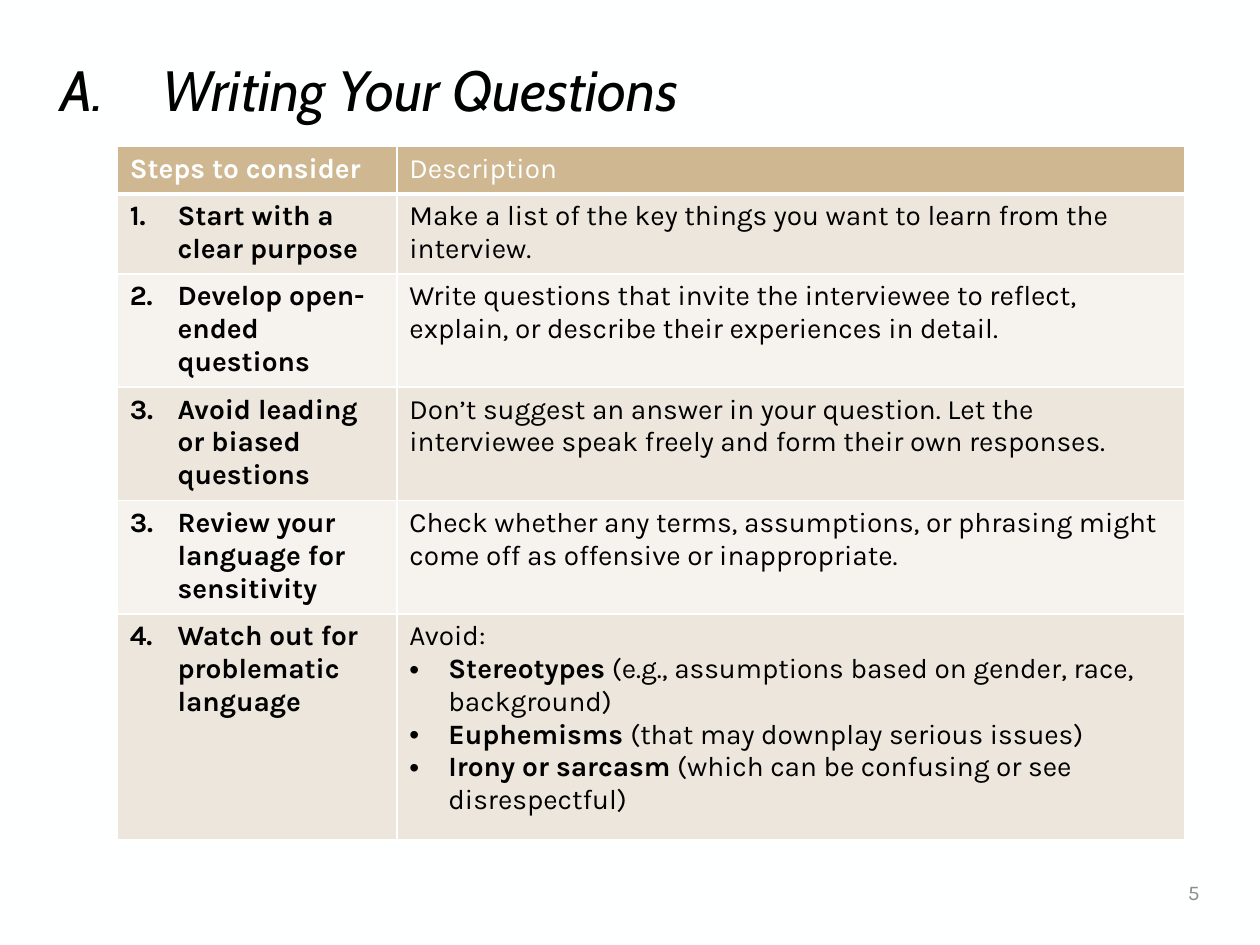
from lxml import etree
from pptx import Presentation
from pptx.dml.color import RGBColor
from pptx.enum.text import MSO_ANCHOR, PP_ALIGN
from pptx.oxml.ns import qn
from pptx.util import Inches, Pt

MIDDLE = MSO_ANCHOR.MIDDLE
LEFT, RIGHT = PP_ALIGN.LEFT, PP_ALIGN.RIGHT
WHITE = RGBColor(0xFE, 0xFF, 0xFF)
BLACK = RGBColor(0, 0, 0)
GRAY = RGBColor(0x8C, 0x8C, 0x8C)
TAN = RGBColor(0xCF, 0xB8, 0x91)
BANDS = [RGBColor(0xED, 0xE6, 0xDC), RGBColor(0xF6, 0xF3, 0xEE)]

HEADINGS = ["Steps to consider", "Description"]
STEPS = [
    (1, "Start with a clear purpose",
     "Make a list of the key things you want to learn from the interview."),
    (2, "Develop open-ended questions",
     "Write questions that invite the interviewee to reflect, explain, "
     "or describe their experiences in detail."),
    (3, "Avoid leading or biased questions",
     "Don’t suggest an answer in your question. Let the interviewee speak "
     "freely and form their own responses."),
    (3, "Review your language for sensitivity",
     "Check whether any terms, assumptions, or phrasing might come off as "
     "offensive or inappropriate."),
    (4, "Watch out for problematic language", "Avoid:"),
]
PITFALLS = [
    ("Stereotypes", " (e.g., assumptions based on gender, race, background)"),
    ("Euphemisms ", "(that may downplay serious issues)"),
    ("Irony or sarcasm", " (which can be confusing or see disrespectful)"),
]
COLUMN_WIDTHS = [2.22, 6.25]
ROW_HEIGHTS = [0.38, 0.6, 0.88, 0.88, 0.88, 1.79]


def add_marker(paragraph, indent, tag, **attributes):
    properties = paragraph._p.get_or_add_pPr()
    properties.set("marL", str(Inches(indent)))
    properties.set("indent", str(-Inches(indent)))
    if tag == "a:buChar":
        etree.SubElement(properties, qn("a:buFont"), typeface="Arial")
    etree.SubElement(properties, qn(tag), **attributes)


def style(paragraph, size, color, face="Karla", bold=None):
    paragraph.font.size = Pt(size)
    paragraph.font.name = face
    paragraph.font.color.rgb = color
    paragraph.font.bold = bold


prs = Presentation()
prs.slide_width, prs.slide_height = Inches(10), Inches(7.5)
slide = prs.slides.add_slide(prs.slide_layouts[5])
slide.background.fill.solid()
slide.background.fill.fore_color.rgb = WHITE

title = slide.shapes.title
title.left, title.top = Inches(0.38), Inches(0.42)
title.width, title.height = Inches(9.24), Inches(0.64)
title.text_frame.text = "Writing Your Questions"
title.text_frame.vertical_anchor = MIDDLE
heading = title.text_frame.paragraphs[0]
heading.alignment = LEFT
heading.line_spacing = 0.9
add_marker(heading, 0.81, "a:buAutoNum", type="alphaUcPeriod")
style(heading, 32.4, BLACK, "Cabin")
heading.font.italic = True

page_number = slide.shapes.add_textbox(
    Inches(8.42), Inches(6.88), Inches(1.2), Inches(0.4)).text_frame
page_number.word_wrap = True
page_number.vertical_anchor = MIDDLE
page_number.text = "5"
page_number.paragraphs[0].alignment = RIGHT
style(page_number.paragraphs[0], 12, GRAY)

table = slide.shapes.add_table(
    len(ROW_HEIGHTS), len(COLUMN_WIDTHS), Inches(0.93), Inches(1.16),
    Inches(sum(COLUMN_WIDTHS)), Inches(sum(ROW_HEIGHTS))).table
table.first_row = False
table.horz_banding = False
for column, width in zip(table.columns, COLUMN_WIDTHS):
    column.width = Inches(width)
for row, height in zip(table.rows, ROW_HEIGHTS):
    row.height = Inches(height)

for column, text in enumerate(HEADINGS):
    cell = table.cell(0, column)
    cell.text = text
    style(cell.text_frame.paragraphs[0], 16, WHITE, bold=column == 0)

for row, (number, step, description) in enumerate(STEPS, start=1):
    step_cell, description_cell = table.cell(row, 0), table.cell(row, 1)
    step_cell.text = step
    description_cell.text = description
    step_line = step_cell.text_frame.paragraphs[0]
    add_marker(step_line, 0.38, "a:buAutoNum",
               type="arabicPeriod", startAt=str(number))
    style(step_line, 16, BLACK, bold=True)
    style(description_cell.text_frame.paragraphs[0], 16, BLACK, bold=False)

for term, explanation in PITFALLS:
    pitfall = table.cell(len(STEPS), 1).text_frame.add_paragraph()
    add_marker(pitfall, 0.31, "a:buChar", char="•")
    style(pitfall, 16, BLACK)
    for text, bold in [(term, True), (explanation, False)]:
        run = pitfall.add_run()
        run.text = text
        run.font.bold = bold

for row in range(len(ROW_HEIGHTS)):
    for column in range(len(COLUMN_WIDTHS)):
        cell = table.cell(row, column)
        properties = cell._tc.get_or_add_tcPr()
        for side in ["L", "R", "T", "B"]:
            thick = (row, side) in [(0, "B"), (1, "T")]
            border = etree.SubElement(properties, qn(f"a:ln{side}"),
                                      w=str(Pt(3 if thick else 1)))
            border_fill = etree.SubElement(border, qn("a:solidFill"))
            etree.SubElement(border_fill, qn("a:srgbClr"), val=str(WHITE))
        cell.fill.solid()
        cell.fill.fore_color.rgb = BANDS[(row - 1) % 2] if row else TAN

prs.save("out.pptx")
